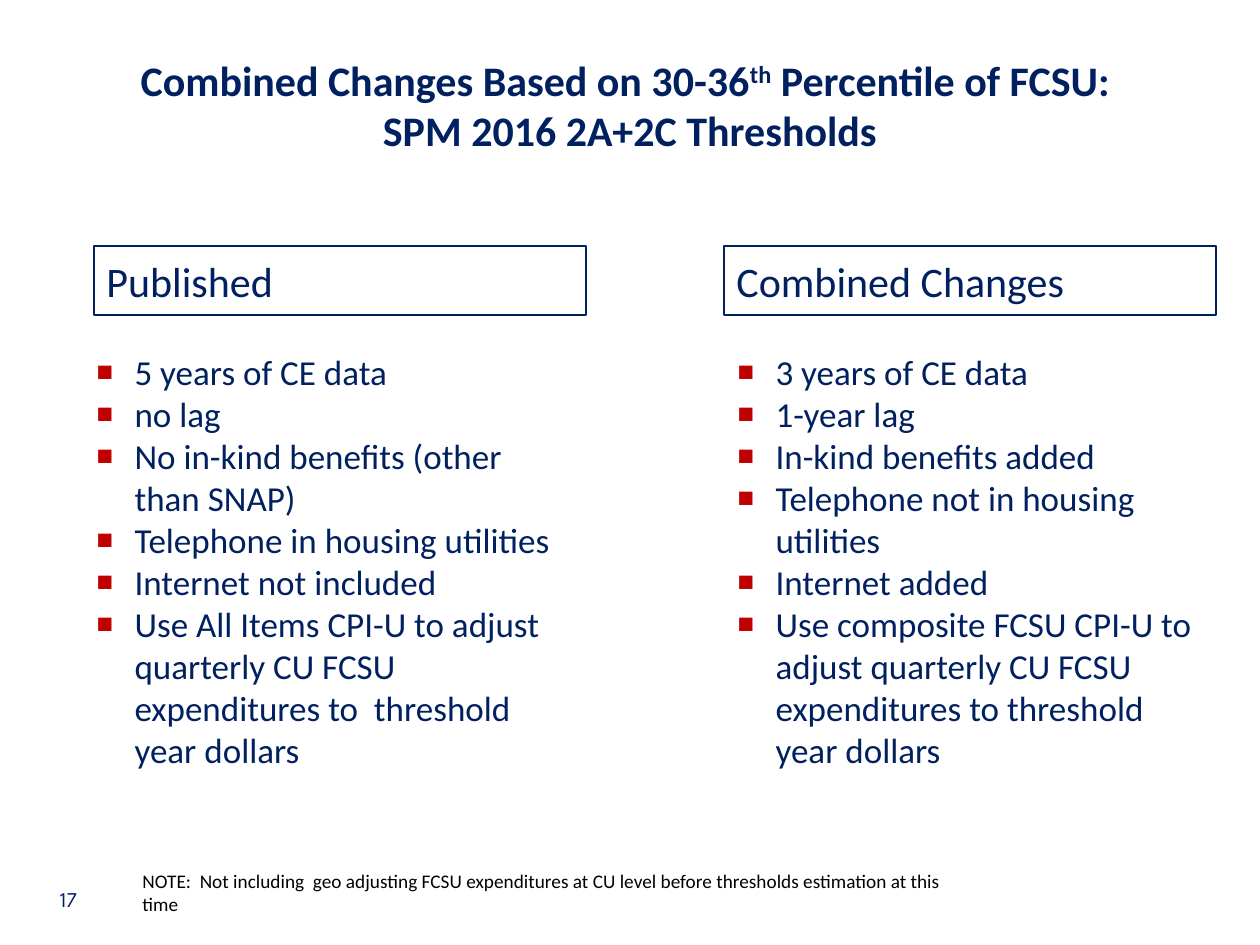
"""Build a slide comparing published thresholds with the combined changes."""
from dataclasses import dataclass

import pptx
import pptx.dml.color
import pptx.enum.shapes
import pptx.enum.text
import pptx.oxml
import pptx.oxml.ns
import pptx.util

PX = 914400 / 126
NAVY, RED, BLACK = "002060", "C00000", "000000"
INDENT = 39
NS = pptx.oxml.ns.nsdecls("a")
BULLET = (
    f'<a:buClr {NS}><a:srgbClr val="{RED}"/></a:buClr>',
    f'<a:buSzPct {NS} val="150000"/>',
    f'<a:buFont {NS} typeface="Calibri"/>',
    f'<a:buChar {NS} char="▪"/>',
)


@dataclass
class Column:
    heading: str
    heading_left: int
    list_left: int
    items: list[str]


COLUMNS = [
    Column("Published", 94, 83, [
        "5 years of CE data",
        "no lag",
        "No in-kind benefits (other than SNAP)",
        "Telephone in housing utilities",
        "Internet not included",
        "Use All Items CPI-U to adjust quarterly CU FCSU expenditures to  threshold year dollars",
    ]),
    Column("Combined Changes", 724, 724, [
        "3 years of CE data",
        "1-year lag",
        "In-kind benefits added",
        "Telephone not in housing utilities",
        "Internet added",
        "Use composite FCSU CPI-U to adjust quarterly CU FCSU expenditures to threshold year dollars",
    ]),
]


def px(n: int) -> int:
    return pptx.util.Emu(round(n * PX))


def rgb(value: str) -> pptx.dml.color.RGBColor:
    return pptx.dml.color.RGBColor.from_string(value)


def place(sp, left: int, top: int, width: int, height: int) -> None:
    sp.left, sp.top, sp.width, sp.height = map(px, (left, top, width, height))


def style(p, size: int, color: str = NAVY, font: str = "Calibri", bold: bool = False) -> None:
    for r in p.runs:
        r.font.size = pptx.util.Pt(size)
        r.font.name = font
        r.font.bold = bold
        r.font.color.rgb = rgb(color)


def setup_frame(tf, anchor=pptx.enum.text.MSO_ANCHOR.TOP, inset: bool = True) -> None:
    tf.word_wrap = True
    tf.auto_size = pptx.enum.text.MSO_AUTO_SIZE.NONE
    tf.vertical_anchor = anchor
    if not inset:
        tf.margin_left = tf.margin_top = tf.margin_right = tf.margin_bottom = 0


def fill_title(sp) -> None:
    place(sp, 82, 54, 1096, 102)
    tf = sp.text_frame
    setup_frame(tf, inset=False)
    tf.text = "Combined Changes Based on 30-36"
    p = tf.paragraphs[0]
    p.alignment = pptx.enum.text.PP_ALIGN.CENTER
    p.line_spacing = 1.0
    ordinal = p.add_run()
    ordinal.text = "th"
    ordinal._r.get_or_add_rPr().set("baseline", "30000")
    p.add_run().text = " Percentile of FCSU: "
    p.add_line_break()
    p.add_run().text = "SPM 2016 2A+2C Thresholds"
    style(p, 24, bold=True)


def add_heading(s, column: Column) -> None:
    sp = s.shapes.add_shape(pptx.enum.shapes.MSO_SHAPE.RECTANGLE, 0, 0, 0, 0)
    place(sp, column.heading_left, 246, 492, 69)
    sp.shadow.inherit = False
    sp.fill.background()
    sp.line.color.rgb = rgb(NAVY)
    sp.line.width = pptx.util.Pt(1.25)
    setup_frame(sp.text_frame, pptx.enum.text.MSO_ANCHOR.MIDDLE)
    sp.text_frame.text = column.heading
    p = sp.text_frame.paragraphs[0]
    p.alignment = pptx.enum.text.PP_ALIGN.LEFT
    style(p, 24)


def fill_list(sp, column: Column) -> None:
    place(sp, column.list_left, 344, 495, 339)
    tf = sp.text_frame
    setup_frame(tf)
    tf.text = "\n".join(column.items)
    for p in tf.paragraphs:
        p.space_before = pptx.util.Pt(0)
        p.line_spacing = 1.0
        pPr = p._p.get_or_add_pPr()
        pPr.set("marL", str(px(INDENT)))
        pPr.set("indent", str(px(-INDENT)))
        for xml in BULLET:
            pPr.append(pptx.oxml.parse_xml(xml))
        style(p, 20)


def add_text(s, text: str, box: tuple[int, int, int, int], size: int, color: str,
             font: str, inset: bool) -> None:
    sp = s.shapes.add_textbox(*map(px, box))
    setup_frame(sp.text_frame, inset=inset)
    sp.text_frame.text = text
    style(sp.text_frame.paragraphs[0], size, color, font)


def main() -> None:
    prs = pptx.Presentation()
    prs.slide_width, prs.slide_height = px(1260), px(945)
    s = prs.slides.add_slide(prs.slide_layouts[3])
    fill_title(s.shapes.title)
    for idx, column in enumerate(COLUMNS, start=1):
        add_heading(s, column)
        fill_list(s.placeholders[idx], column)
    add_text(s, "17", (60, 886, 542, 30), 12, NAVY, "League Spartan", False)
    add_text(s, "NOTE:  Not including  geo adjusting FCSU expenditures at CU level "
             "before thresholds estimation at this time",
             (130, 863, 863, 37), 11, BLACK, "Calibri", True)
    prs.save("out.pptx")


if __name__ == "__main__":
    main()
